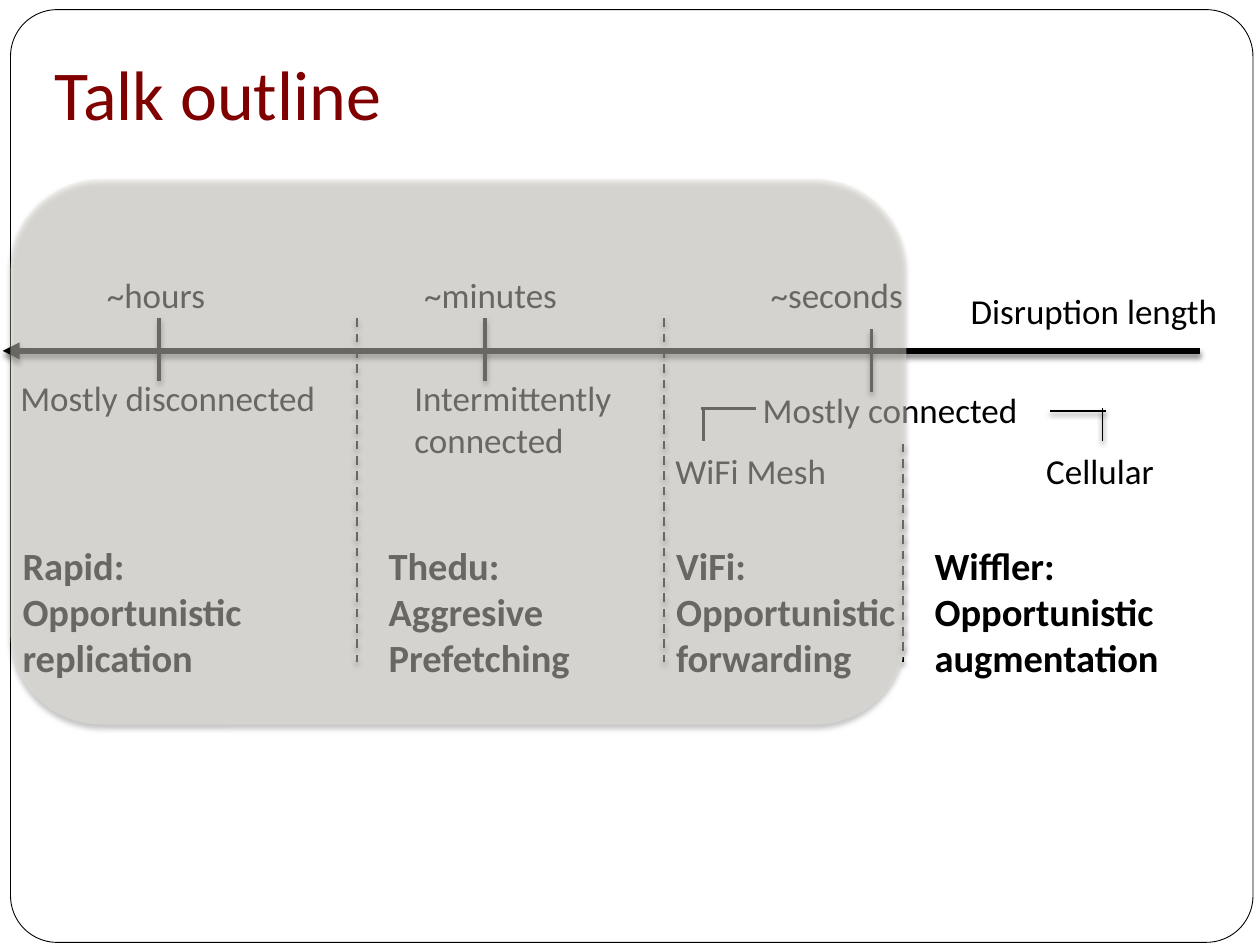
from dataclasses import dataclass

from lxml.etree import SubElement
from pptx import Presentation
from pptx.dml.color import RGBColor
from pptx.enum.dml import MSO_LINE_DASH_STYLE as Dash
from pptx.enum.shapes import MSO_CONNECTOR as Connector, MSO_SHAPE as Preset
from pptx.enum.text import MSO_ANCHOR as Anchor, PP_ALIGN as Align
from pptx.oxml.ns import qn
from pptx.util import Pt

COLORS = {"ink": "000000", "title": "800000", "veil": "E9E5DC"}
FONT_NAME = "Calibri"
LABEL = {"size": Pt(20), "bold": False}
SYSTEM = {"size": Pt(22), "bold": True}
TITLE = {"size": Pt(40), "bold": False}
TITLE_FRAME = {
    "word_wrap": True,
    "vertical_anchor": Anchor.BOTTOM,
    "margin_left": Pt(7.2),
    "margin_right": Pt(7.2),
    "margin_top": Pt(3.6),
    "margin_bottom": Pt(7.2),
}


@dataclass
class Label:
    left: float
    top: float
    width: float
    height: float
    lines: tuple
    style: dict
    wrap: bool = True


@dataclass
class Stroke:
    start: tuple
    end: tuple
    width: float
    dashed: bool = False
    arrow: bool = False
    shadow: bool = True


def color(name: str) -> RGBColor:
    return RGBColor.from_string(COLORS[name])


def apply(target, values: dict) -> None:
    for name, value in values.items():
        setattr(target, name, value)


def format_font(font, style: dict, color_name: str) -> None:
    apply(font, {"name": FONT_NAME, **style})
    font.color.rgb = color(color_name)


def set_effects(shape, shadow: bool) -> None:
    effects = SubElement(shape._element.spPr, qn("a:effectLst"))
    if shadow:
        outer = SubElement(effects, qn("a:outerShdw"), blurRad=str(Pt(3)),
                           dist=str(Pt(2)), dir="5400000", rotWithShape="0")
        shade = SubElement(outer, qn("a:srgbClr"), val=COLORS["ink"])
        SubElement(shade, qn("a:alpha"), val="50000")


def draw_stroke(slide, stroke: Stroke) -> None:
    points = [Pt(value) for value in (*stroke.start, *stroke.end)]
    connector = slide.shapes.add_connector(Connector.STRAIGHT, *points)
    connector.line.width = Pt(stroke.width)
    connector.line.color.rgb = color("ink")
    if stroke.dashed:
        connector.line.dash_style = Dash.DASH
    if stroke.arrow:
        outline = connector._element.spPr.find(qn("a:ln"))
        SubElement(outline, qn("a:headEnd"), type="triangle")
    set_effects(connector, stroke.shadow)


def draw_label(slide, label: Label) -> None:
    box = slide.shapes.add_textbox(Pt(label.left), Pt(label.top),
                                   Pt(label.width), Pt(label.height))
    frame = box.text_frame
    frame.word_wrap = label.wrap
    for index, line in enumerate(label.lines):
        paragraph = frame.add_paragraph() if index else frame.paragraphs[0]
        run = paragraph.add_run()
        run.text = line
        format_font(run.font, label.style, "ink")


def draw_title(slide, text: str) -> None:
    title = slide.shapes.title
    apply(title, {"left": Pt(24), "top": Pt(-6), "width": Pt(696), "height": Pt(90)})
    apply(title.text_frame, TITLE_FRAME)
    paragraph = title.text_frame.paragraphs[0]
    paragraph.alignment = Align.LEFT
    run = paragraph.add_run()
    run.text = text
    format_font(run.font, TITLE, "title")


def draw_frame(slide) -> None:
    frame = slide.shapes.add_shape(Preset.ROUNDED_RECTANGLE,
                                   Pt(6), Pt(5.5), Pt(710), Pt(533))
    frame.adjustments[0] = 0.05
    frame.fill.background()
    frame.line.color.rgb = color("ink")
    frame.line.width = Pt(0.5)
    frame.shadow.inherit = False


def draw_veil(slide) -> None:
    veil = slide.shapes.add_shape(Preset.ROUNDED_RECTANGLE,
                                  Pt(6), Pt(102.5), Pt(512), Pt(311.5))
    veil.fill.solid()
    veil.fill.fore_color.rgb = color("veil")
    fill_color = veil._element.spPr.find(qn("a:solidFill")).find(qn("a:srgbClr"))
    SubElement(fill_color, qn("a:alpha"), val="45000")
    veil.line.fill.background()
    set_effects(veil, True)


DIVIDERS = [Stroke((x, top), (x, 378), 1.25, dashed=True)
            for x, top in ((203.8, 182), (379.4, 182), (516.2, 253.5))]
TICKS = [Stroke((x, top), (x, top + 36), 2)
         for x, top in ((91, 182), (277.2, 182), (498, 188))]
AXIS = Stroke((1.5, 200.5), (685.5, 200.5), 3.25, arrow=True)
BRANCHES = [
    Stroke((402, 233.3), (402, 252), 1.5, shadow=False),
    Stroke((432, 233.3), (400.5, 233.3), 1.5, shadow=False),
    Stroke((632, 234.7), (600, 234.7), 1),
    Stroke((630, 233.3), (630, 252), 1),
]

LABELS = [
    *(Label(left, 152.6, width, 31.5, (text,), LABEL, wrap=False)
      for left, width, text in ((54, 71, "~hours"), (235.3, 91.5, "~minutes"),
                                (433.3, 91, "~seconds"))),
    Label(547.5, 162, 157, 31.5, ("Disruption length",), LABEL, wrap=False),
    Label(4.5, 211.7, 184, 31.5, ("Mostly disconnected",), LABEL, wrap=False),
    Label(229.7, 211.7, 129, 55.5, ("Intermittently", "connected"), LABEL, wrap=False),
    Label(428.8, 218.7, 225, 31.5, ("Mostly connected",), LABEL),
    Label(378.8, 253.5, 137.5, 31.5, ("WiFi Mesh",), LABEL),
    Label(590.8, 253.5, 105, 31.5, ("Cellular",), LABEL),
    *(Label(left, 306, 196, 87, lines, SYSTEM)
      for left, lines in (
          (5.8, ("Rapid: Opportunistic", "replication")),
          (215, ("Thedu:", "Aggresive", "Prefetching")),
          (379.3, ("ViFi:", "Opportunistic forwarding")),
          (527, ("Wiffler: Opportunistic augmentation",)))),
]


def main() -> None:
    presentation = Presentation()
    apply(presentation, {"slide_width": Pt(720), "slide_height": Pt(540)})
    slide = presentation.slides.add_slide(presentation.slide_layouts[5])
    draw_frame(slide)
    draw_title(slide, "Talk outline")
    for stroke in (*DIVIDERS, AXIS, *TICKS, *BRANCHES):
        draw_stroke(slide, stroke)
    for label in LABELS:
        draw_label(slide, label)
    draw_veil(slide)
    presentation.save("out.pptx")


if __name__ == "__main__":
    main()
